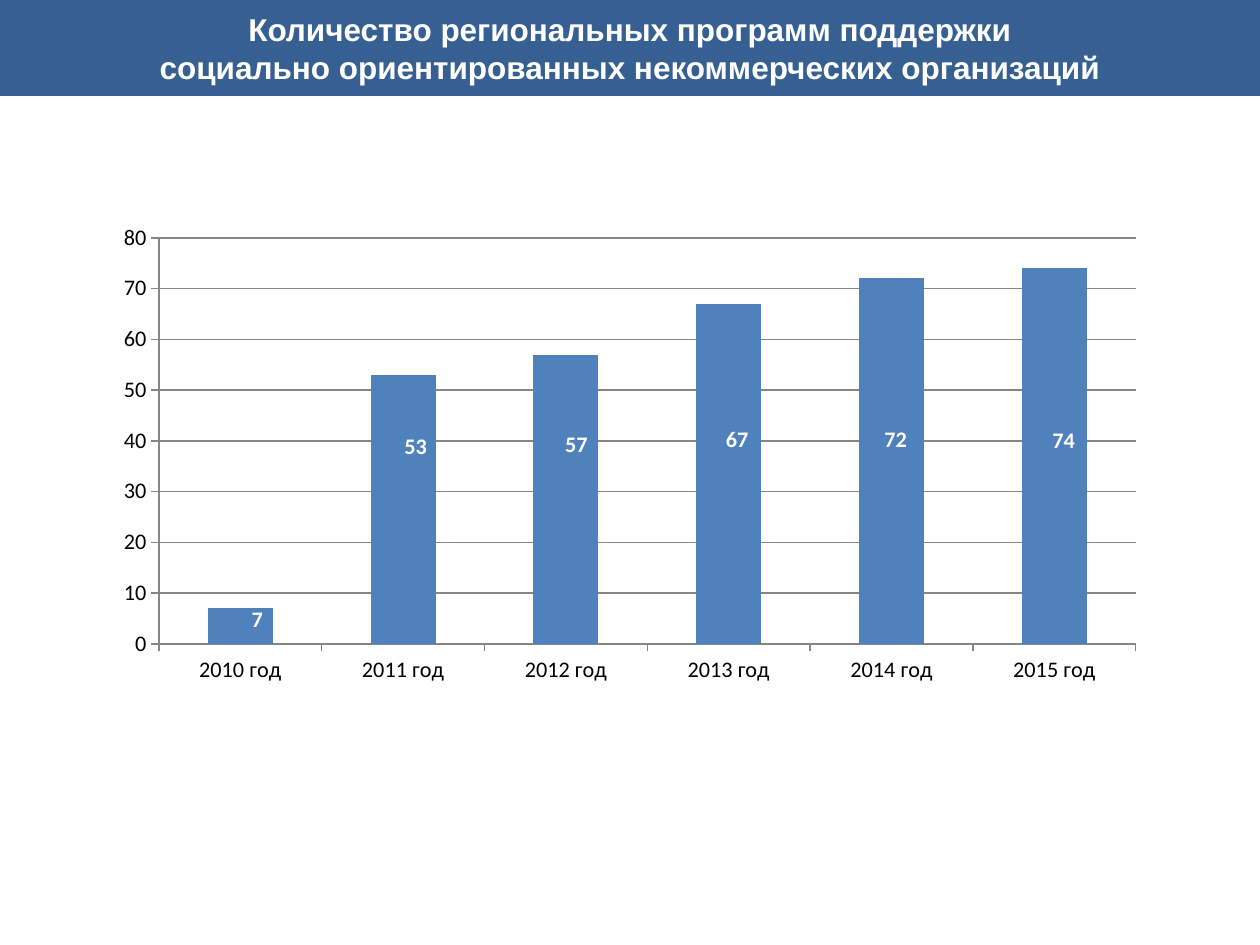
"""Build a slide with a column chart of regional support programmes by year."""
from dataclasses import dataclass

from lxml import etree
from pptx import Presentation
from pptx.chart.data import CategoryChartData
from pptx.dml.color import RGBColor
from pptx.enum.chart import XL_CHART_TYPE, XL_LABEL_POSITION, XL_TICK_MARK
from pptx.enum.text import MSO_ANCHOR, MSO_AUTO_SIZE, PP_ALIGN
from pptx.oxml import parse_xml
from pptx.util import Pt

STACKED = XL_CHART_TYPE.COLUMN_STACKED
LABEL_CENTER = XL_LABEL_POSITION.CENTER
TICK_OUTSIDE = XL_TICK_MARK.OUTSIDE
MIDDLE = MSO_ANCHOR.MIDDLE
NO_AUTOSIZE = MSO_AUTO_SIZE.NONE
CENTER = PP_ALIGN.CENTER
PX = 914400 / 126
CHART_NS = "http://schemas.openxmlformats.org/drawingml/2006/chart"


@dataclass(frozen=True)
class Theme:
    band: RGBColor = RGBColor(0x37, 0x60, 0x92)
    bar: RGBColor = RGBColor(0x4F, 0x81, 0xBD)
    grid: RGBColor = RGBColor(0x86, 0x86, 0x86)
    white: RGBColor = RGBColor(0xFF, 0xFF, 0xFF)
    black: RGBColor = RGBColor(0, 0, 0)
    title_font: str = "Arial"
    chart_font: str = "Calibri"
    title_size: float = 18
    chart_size: float = 12.7


def write(tf, text, *, font, size, color, bold=False, align=CENTER):
    tf.text = text
    for p in tf.paragraphs:
        p.alignment = align
        for r in p.runs:
            r.font.name, r.font.size, r.font.bold = font, Pt(size), bold
            r.font.color.rgb = color


def manual_layout(**values):
    layout = parse_xml(f'<c:layout xmlns:c="{CHART_NS}"><c:manualLayout/></c:layout>')
    for name, value in values.items():
        etree.SubElement(layout[0], f"{{{CHART_NS}}}{name}").set("val", str(value))
    return layout


theme = Theme()
prs = Presentation()
prs.slide_width, prs.slide_height = int(1260 * PX), int(945 * PX)
s = prs.slides.add_slide(prs.slide_layouts[5])

title = s.shapes.title
title.left, title.top, title.width, title.height = 0, 0, prs.slide_width, int(96 * PX)
title.fill.solid()
title.fill.fore_color.rgb = theme.band
tf = title.text_frame
tf.word_wrap = True
tf.auto_size = NO_AUTOSIZE
tf.vertical_anchor = MIDDLE
write(
    tf,
    "Количество региональных программ поддержки\n"
    "социально ориентированных некоммерческих организаций",
    font=theme.title_font, size=theme.title_size, color=theme.white, bold=True,
)

data = CategoryChartData()
data.categories = [f"{year} год" for year in range(2010, 2016)]
data.add_series("Series 1", [7, 53, 57, 67, 72, 74])
left, top, width, height = 103, 214, 1055, 479
frame = s.shapes.add_chart(STACKED, *(int(n * PX) for n in (left, top, width, height)), data)
chart = frame.chart
chart.has_legend = False
chart.has_title = False
chart.font.name, chart.font.size = theme.chart_font, Pt(theme.chart_size)
chart.font.color.rgb = theme.black

plot = chart.plots[0]
plot.gap_width, plot.overlap = 150, 100
plot.vary_by_categories = False
axis = chart.value_axis
axis.minimum_scale, axis.maximum_scale, axis.major_unit = 0, 80, 10
axis.has_major_gridlines = True
for ax in (axis, chart.category_axis):
    ax.major_tick_mark = TICK_OUTSIDE
for line in (axis.format.line, chart.category_axis.format.line, axis.major_gridlines.format.line):
    line.color.rgb = theme.grid
    line.width = Pt(0.75)

area = chart.element.find(f".//{{{CHART_NS}}}plotArea")
for old in area.findall(f"{{{CHART_NS}}}layout"):
    area.remove(old)
area.insert(0, manual_layout(
    layoutTarget="inner", xMode="edge", yMode="edge",
    x=round((159 - left) / width, 3), y=round((238 - top) / height, 3),
    w=round(977 / width, 3), h=round(406 / height, 3),
))

series = plot.series[0]
series.format.fill.solid()
series.format.fill.fore_color.rgb = theme.bar
series.data_labels.show_value = True
label_shifts = [(17, -6), (13, -62), (11, -54), (8, -34), (4, -21), (9, -15)]
for i in range(len(label_shifts)):
    label = series.points[i].data_label
    label.position = LABEL_CENTER
    label.font.bold = True
    label.font.size = Pt(theme.chart_size)
    label.font.color.rgb = theme.white
for item, (dx, dy) in zip(area.iter(f"{{{CHART_NS}}}dLbl"), label_shifts):
    item.insert(1, manual_layout(x=round(dx / width, 3), y=round(dy / height, 3)))
for leader in area.iter(f"{{{CHART_NS}}}showLeaderLines"):
    leader.set("val", "0")

prs.save("out.pptx")
